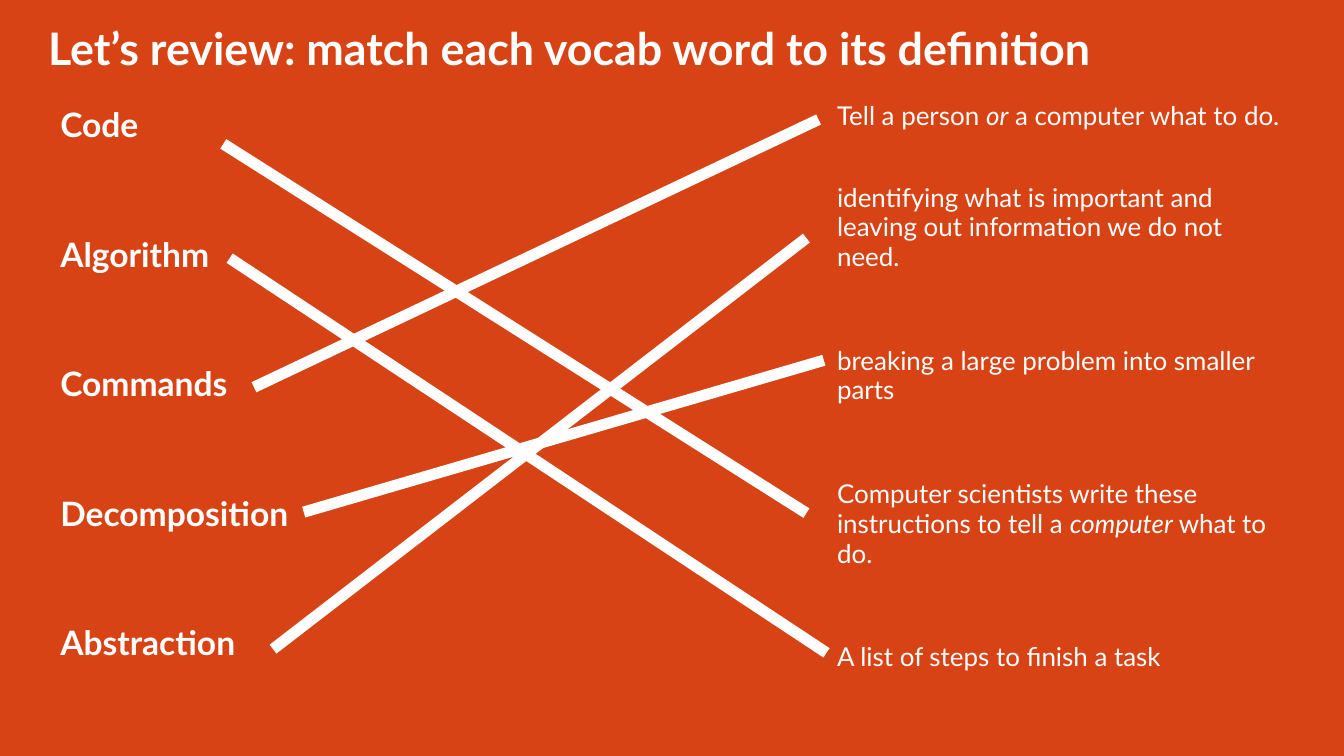
from dataclasses import dataclass

import pptx
import pptx.dml.color
import pptx.enum.shapes
import pptx.enum.text
import pptx.oxml
import pptx.util
from pptx.util import Cm


@dataclass(frozen=True)
class Theme:
    background: pptx.dml.color.RGBColor = pptx.dml.color.RGBColor(0xD8, 0x43, 0x15)
    ink: pptx.dml.color.RGBColor = pptx.dml.color.RGBColor(0xFF, 0xFF, 0xFF)
    font: str = "Lato"
    title_size: float = 24
    term_size: float = 18
    definition_size: float = 13.9
    line_width: float = 6


@dataclass(frozen=True)
class TextBlock:
    frame: tuple[float, float, float, float]  # left, top, width, height in cm
    paragraphs: list[list[str]]  # every second span is italic
    size: float
    bold: bool = False
    line_spacing: float = 1.0
    first_gap: float = 0  # points between paragraphs one and two
    gap: float = 0  # points between the later paragraphs


@dataclass(frozen=True)
class Match:
    start: tuple[float, float]
    end: tuple[float, float]


THEME = Theme()

TITLE = TextBlock(
    (0.66, 0.15, 24.1, 1.55),
    [["Let’s review: match each vocab word to its definition"]],
    THEME.title_size, bold=True,
)
TERMS = TextBlock(
    (0.89, 1.68, 6.73, 11.25),
    [["Code"], ["Algorithm"], ["Commands"], ["Decomposition"], ["Abstraction"]],
    THEME.term_size, bold=True, line_spacing=1.05, first_gap=46.7, gap=46.7,
)
DEFINITIONS = TextBlock(
    (15.57, 1.68, 9.02, 11.56),
    [
        ["Tell a person ", "or", " a computer what to do."],
        ["identifying what is important and leaving out information we do not need."],
        ["breaking a large problem into smaller parts"],
        ["Computer scientists write these instructions to tell a ", "computer ", "what to do."],
        ["A list of steps to finish a task"],
    ],
    THEME.definition_size, line_spacing=0.95, first_gap=27.85, gap=39.85,
)
MATCHES = [
    Match((4.22, 2.72), (15.24, 9.7)),  # code
    Match((4.34, 4.88), (15.62, 12.34)),  # algorithm
    Match((4.8, 7.32), (15.47, 2.26)),  # commands
    Match((5.74, 9.68), (15.57, 6.81)),  # decomposition
    Match((5.16, 12.27), (15.24, 4.5)),  # abstraction
]


def apply_format(target: object, values: dict) -> None:
    for name, value in values.items():
        setattr(target, name, value)


def add_text(page, block: TextBlock) -> None:
    box = page.shapes.add_textbox(*map(Cm, block.frame))
    frame = box.text_frame
    apply_format(frame, {
        "word_wrap": True,
        "vertical_anchor": pptx.enum.text.MSO_ANCHOR.TOP,
        **{f"margin_{side}": Cm(0.25) for side in ("left", "top", "right", "bottom")},
    })
    gaps = [0, block.first_gap] + [block.gap] * len(block.paragraphs)
    for index, (spans, gap) in enumerate(zip(block.paragraphs, gaps)):
        para = frame.add_paragraph() if index else frame.paragraphs[0]
        apply_format(para, {
            "line_spacing": block.line_spacing,
            "space_before": pptx.util.Pt(gap),
            "space_after": pptx.util.Pt(0),
        })
        for position, text in enumerate(spans):
            span = para.add_run()
            span.text = text
            apply_format(span.font, {
                "name": THEME.font,
                "size": pptx.util.Pt(block.size),
                "bold": block.bold,
                "italic": position % 2 == 1,
            })
            span.font.color.rgb = THEME.ink


def add_match(page, match: Match) -> None:
    line = page.shapes.add_connector(
        pptx.enum.shapes.MSO_CONNECTOR.STRAIGHT, *map(Cm, match.start + match.end)
    )
    line.line.color.rgb = THEME.ink
    line.line.width = pptx.util.Pt(THEME.line_width)
    properties = line._element.spPr
    properties.append(properties.makeelement(pptx.oxml.ns.qn("a:effectLst"), {}))


def main() -> None:
    # Deck and background
    deck = pptx.Presentation()
    apply_format(deck, {"slide_width": Cm(25.4), "slide_height": Cm(14.29)})
    page = deck.slides.add_slide(deck.slide_layouts[6])
    page.background.fill.solid()
    page.background.fill.fore_color.rgb = THEME.background

    # Title, vocabulary and definitions
    for block in (TITLE, TERMS, DEFINITIONS):
        add_text(page, block)

    # Lines from each word to its definition
    for match in MATCHES:
        add_match(page, match)

    deck.save("out.pptx")


if __name__ == "__main__":
    main()
